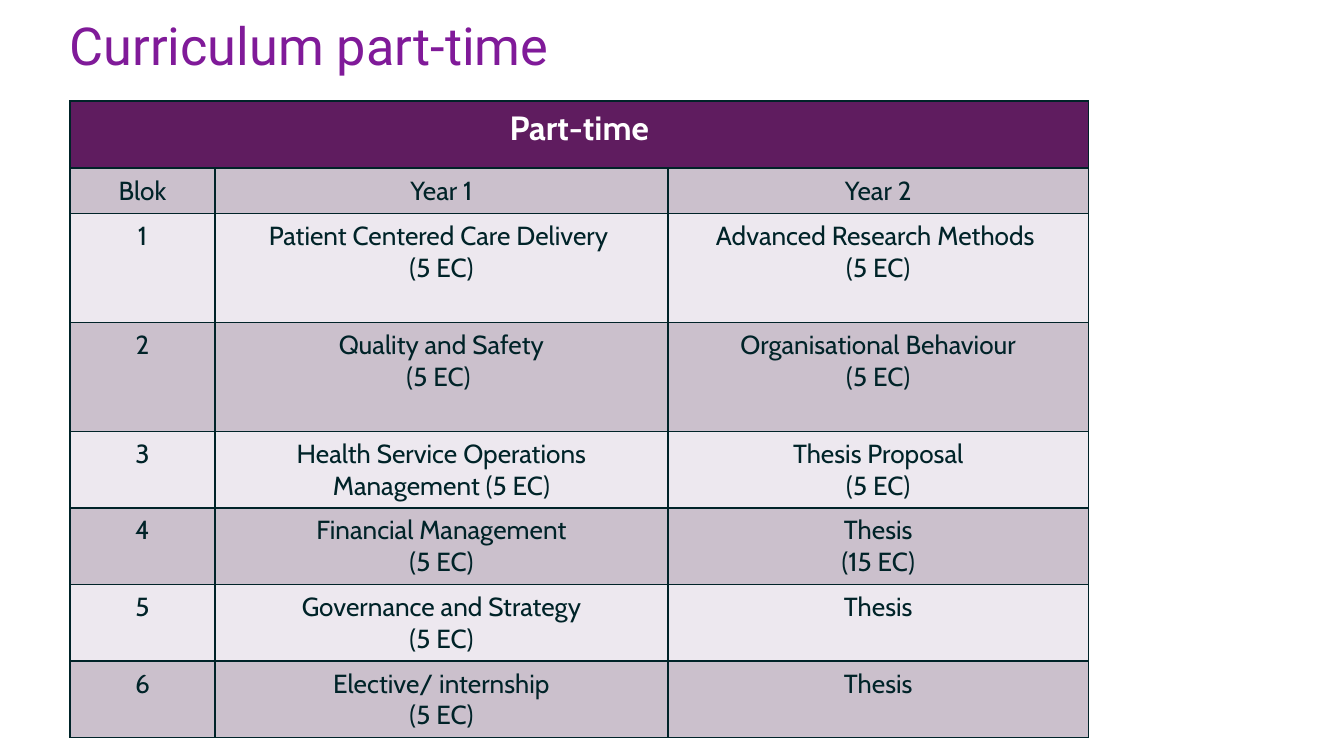
"""Build the part-time curriculum slide with its table of blocks per year."""
from lxml import etree
from pptx import Presentation
from pptx.dml.color import RGBColor
from pptx.enum import text
from pptx.oxml import ns
from pptx.util import Inches, Pt

COLORS = {
    "title": "801A99",
    "header": "5F1C5F",
    "header text": "FFFFFF",
    "dark band": "CBC0CC",
    "light band": "EDE8EF",
    "ink": "002328",
}
TITLE = "Curriculum part-time"
HEADER = "Part-time"
ROWS = [
    ("Blok", "Year 1", "Year 2"),
    ("1", "Patient Centered Care Delivery \n(5 EC)", "Advanced Research Methods \n(5 EC)"),
    ("2", "Quality and Safety\n(5 EC) ", "Organisational Behaviour\n(5 EC)"),
    ("3", "Health Service Operations Management (5 EC)", "Thesis Proposal\n(5 EC)"),
    ("4", "Financial Management\n(5 EC)", "Thesis\n(15 EC)"),
    ("5", "Governance and Strategy\v(5 EC)", "Thesis"),
    ("6", "Elective/ internship\n(5 EC)", "Thesis"),
]
SLIDE_WIDTH = 10
COLUMN_WIDTHS = [1.08, 3.37, 3.13]
ROW_HEIGHTS = [0.5, 0.34, 0.81, 0.81] + [0.57] * 4
LEFT, TABLE_TOP = 0.52, 0.75


def style_font(font, name, size, color, bold=False):
    font.name, font.size, font.bold = name, Pt(size), bold
    font.color.rgb = RGBColor.from_string(COLORS[color])


def add_borders(cell):
    properties = cell._tc.get_or_add_tcPr()
    for side in ("lnL", "lnR", "lnT", "lnB"):
        line = etree.SubElement(properties, ns.qn(f"a:{side}"), w=str(Pt(1)))
        fill = etree.SubElement(line, ns.qn("a:solidFill"))
        etree.SubElement(fill, ns.qn("a:srgbClr"), val=COLORS["ink"])


def style_cell(cell, fill, size, color, bold=False):
    add_borders(cell)
    cell.fill.solid()
    cell.fill.fore_color.rgb = RGBColor.from_string(COLORS[fill])
    for paragraph in cell.text_frame.paragraphs:
        paragraph.alignment = text.PP_ALIGN.CENTER
        for run in paragraph.runs:
            style_font(run.font, "Cabin", size, color, bold)


def add_title(slide):
    frame = slide.shapes.add_textbox(
        Inches(LEFT), Inches(0.12), Inches(8.94), Inches(0.63)).text_frame
    frame.margin_left = frame.margin_right = frame.margin_top = frame.margin_bottom = 0
    frame.word_wrap = True
    frame.text = TITLE
    paragraph = frame.paragraphs[0]
    paragraph.line_spacing = Pt(32)
    style_font(paragraph.runs[0].font, "Roboto", 28, "title")


def add_curriculum(slide):
    table = slide.shapes.add_table(
        len(ROW_HEIGHTS), len(COLUMN_WIDTHS), Inches(LEFT), Inches(TABLE_TOP),
        Inches(sum(COLUMN_WIDTHS)), Inches(sum(ROW_HEIGHTS))).table
    for column, width in zip(table.columns, COLUMN_WIDTHS):
        column.width = Inches(width)
    for row, height in zip(table.rows, ROW_HEIGHTS):
        row.height = Inches(height)

    table.cell(0, 0).merge(table.cell(0, len(COLUMN_WIDTHS) - 1))
    table.cell(0, 0).text = HEADER
    for cell in table.rows[0].cells:
        style_cell(cell, "header", 18, "header text", bold=True)
    for index, labels in enumerate(ROWS, start=1):
        band = "dark band" if index % 2 else "light band"
        for cell, label in zip(table.rows[index].cells, labels):
            cell.text = label
            style_cell(cell, band, 14, "ink")


def main():
    presentation = Presentation()
    presentation.slide_width = Inches(SLIDE_WIDTH)
    presentation.slide_height = Inches(SLIDE_WIDTH * 9 / 16)
    slide = presentation.slides.add_slide(presentation.slide_layouts[6])
    add_title(slide)
    add_curriculum(slide)
    presentation.save("out.pptx")


if __name__ == "__main__":
    main()
